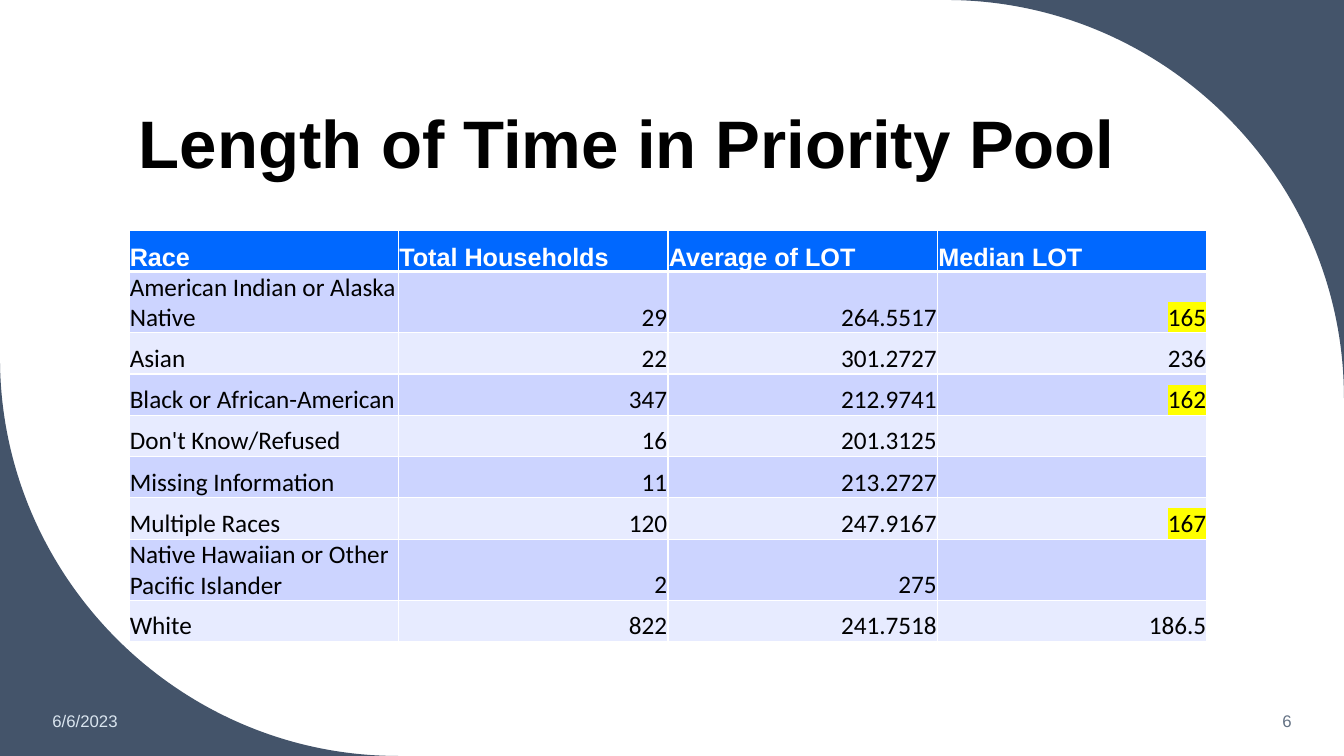
from lxml.etree import SubElement
from pptx import Presentation
from pptx.dml.color import RGBColor
from pptx.enum.text import MSO_ANCHOR as Anchor, PP_ALIGN as Align
from pptx.oxml.ns import qn
from pptx.util import Cm, Pt

TITLE = "Length of Time in Priority Pool"
DATE = "6/6/2023"
PAGE = "6"
HEAD = ("Race", "Total Households", "Average of LOT", "Median LOT")
ROWS = [
    ("American Indian or Alaska Native", "29", "264.5517", "165"),
    ("Asian", "22", "301.2727", "236"),
    ("Black or African-American", "347", "212.9741", "162"),
    ("Don't Know/Refused", "16", "201.3125", ""),
    ("Missing Information", "11", "213.2727", ""),
    ("Multiple Races", "120", "247.9167", "167"),
    ("Native Hawaiian or Other Pacific Islander", "2", "275", ""),
    ("White", "822", "241.7518", "186.5"),
]
MARKED = ("165", "162", "167")

SLATE = RGBColor(0x44, 0x54, 0x6A)
BLUE = RGBColor(0x00, 0x68, 0xFF)
BANDS = (RGBColor(0xCC, 0xD4, 0xFF), RGBColor(0xE7, 0xEB, 0xFF))
BLACK = RGBColor(0, 0, 0)
WHITE = RGBColor(0xFF, 0xFF, 0xFF)
YELLOW = RGBColor(0xFF, 0xFF, 0)
PALE = RGBColor(0xDA, 0xE5, 0xEF)
GREY = RGBColor(0x63, 0x71, 0x83)

WIDE, HIGH = 33.86, 19.05
ROUND = 10.03
BEND = 0.55  # handle length of a quarter circle, as a share of its radius
LEFT, TOP = 3.25, 5.8
COL, ROW = 6.79, 1.04

HEAD_FONT = {"name": "Arial", "size": Pt(18), "bold": True}
BODY_FONT = {"name": "Calibri", "size": Pt(18), "bold": False}
TITLE_FONT = {"name": "Arial", "size": Pt(48), "bold": True}
FOOT_FONT = {"name": "Arial", "size": Pt(12), "bold": False}
INSETS = {"margin_left": Cm(0.02), "margin_right": Cm(0.02),
          "margin_top": Cm(0.02), "margin_bottom": 0,
          "vertical_anchor": Anchor.BOTTOM}
EDGES = {"a:lnL": 1, "a:lnR": 1, "a:lnT": 1, "a:lnB": 3}


def apply(obj, values):
    for name, value in values.items():
        setattr(obj, name, value)


def write(frame, text, font, color, align=Align.LEFT):
    para = frame.paragraphs[0]
    para.alignment = align
    run = para.add_run()
    run.text = text
    apply(run.font, font)
    run.font.color.rgb = color
    return run


def add_text(slide, box, text, font, color, anchor, align=Align.LEFT):
    frame = slide.shapes.add_textbox(*map(Cm, box)).text_frame
    apply(frame, {"word_wrap": True, "vertical_anchor": anchor})
    write(frame, text, font, color, align)
    return frame


def add_corner(slide, x, y, side):
    """Fill the area between a slide corner and its quarter circle."""
    far, bend = side * ROUND, side * ROUND * (1 - BEND)
    spots = [(x - far, y), (x - bend, y), (x, y + bend), (x, y + far), (x, y)]
    start, *rest = [(Cm(a), Cm(b)) for a, b in spots]
    form = slide.shapes.build_freeform(*start)
    form.add_line_segments(rest, close=True)
    shape = form.convert_to_shape()
    shape.shadow.inherit = False
    shape.fill.solid()
    shape.fill.fore_color.rgb = SLATE
    shape.line.fill.background()
    # The first three segments become one curve
    lines = list(shape._element.iter(qn("a:lnTo")))[:3]
    curve = SubElement(lines[0].getparent(), qn("a:cubicBezTo"))
    lines[0].addprevious(curve)
    for line in lines:
        curve.append(line[0])
        line.getparent().remove(line)


def paint(parent, color):
    fill = SubElement(parent, qn("a:solidFill"))
    SubElement(fill, qn("a:srgbClr"), val=str(color))


def add_edges(cell):
    """Draw the borders; they must come before the cell fill."""
    props = cell._tc.get_or_add_tcPr()
    for spot, (tag, width) in enumerate(EDGES.items()):
        line = SubElement(props, qn(tag), w=str(Pt(width)))
        paint(line, WHITE)
        props.insert(spot, line)


def mark(run):
    """Highlight a run; the element must follow the text fill."""
    props = run.font._element
    light = SubElement(props, qn("a:highlight"))
    SubElement(light, qn("a:srgbClr"), val=str(YELLOW))
    props.find(qn("a:solidFill")).addnext(light)


def add_grid(slide):
    lines = [HEAD] + ROWS
    size = len(lines), len(HEAD)
    box = LEFT, TOP, COL * size[1], ROW * size[0]
    table = slide.shapes.add_table(*size, *map(Cm, box)).table
    for r, line in enumerate(lines):
        table.rows[r].height = Cm(ROW)
        font, color, fill = ((BODY_FONT, BLACK, BANDS[(r - 1) % 2]) if r
                             else (HEAD_FONT, WHITE, BLUE))
        for c, text in enumerate(line):
            cell = table.cell(r, c)
            apply(cell, INSETS)
            cell.fill.solid()
            cell.fill.fore_color.rgb = fill
            if r == 0:
                add_edges(cell)
            if text:
                align = Align.RIGHT if r and c else Align.LEFT
                run = write(cell.text_frame, text, font, color, align)
                if text in MARKED:
                    mark(run)


def main():
    deck = Presentation()
    deck.slide_width, deck.slide_height = Cm(WIDE), Cm(HIGH)
    slide = deck.slides.add_slide(deck.slide_layouts[6])
    add_corner(slide, WIDE, 0, 1)
    add_corner(slide, 0, HIGH, -1)
    title = add_text(slide, (LEFT, 1.07, 27.15, 3.68), TITLE, TITLE_FONT,
                     BLACK, Anchor.BOTTOM)
    title.paragraphs[0].line_spacing = 0.9
    add_grid(slide)
    add_text(slide, (1.07, 17.65, 4.72, 1.02), DATE, FOOT_FONT, PALE,
             Anchor.MIDDLE)
    add_text(slide, (28.19, 17.65, 4.6, 1.02), PAGE, FOOT_FONT, GREY,
             Anchor.MIDDLE, Align.RIGHT)
    deck.save("out.pptx")


if __name__ == "__main__":
    main()
